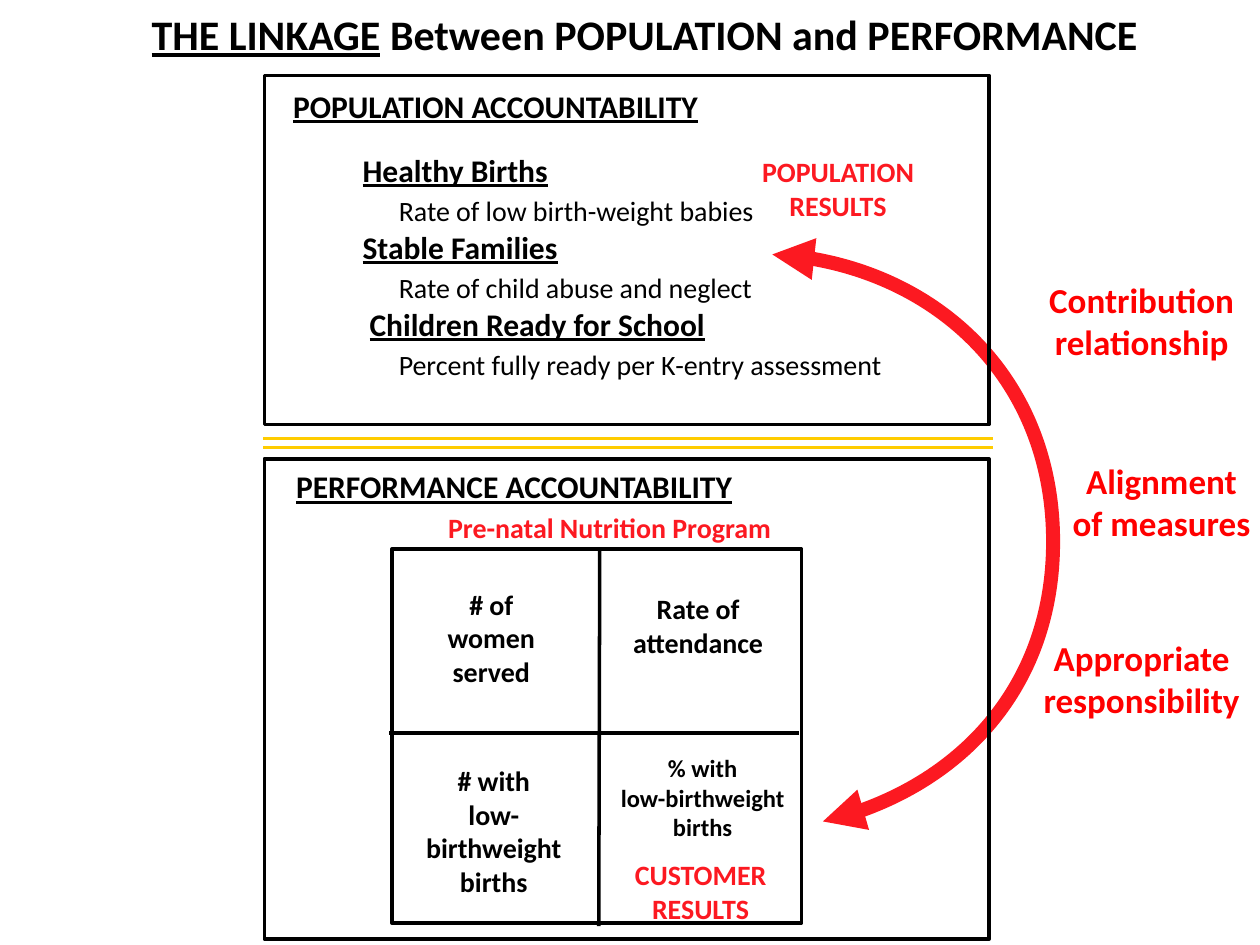
from lxml import etree
from pptx import Presentation
from pptx.dml.color import RGBColor
from pptx.enum.shapes import MSO_CONNECTOR, MSO_SHAPE
from pptx.enum.text import MSO_AUTO_SIZE, PP_ALIGN
from pptx.oxml.ns import qn
from pptx.util import Cm, Pt

LEFT, CENTER = PP_ALIGN.LEFT, PP_ALIGN.CENTER
RECTANGLE = MSO_SHAPE.RECTANGLE
STRAIGHT = MSO_CONNECTOR.STRAIGHT
GROW = MSO_AUTO_SIZE.SHAPE_TO_FIT_TEXT

FONT = "Calibri"
BLACK, RED, BRIGHT_RED, YELLOW = "000000", "FC1921", "FF0000", "FFCC00"


def color(hex_code):
    return RGBColor.from_string(hex_code)


def add_run(paragraph, text, size, ink=BLACK, bold=True, underline=False):
    run = paragraph.add_run()
    run.text = text
    font = run.font
    font.name, font.size = FONT, Pt(size)
    font.bold, font.underline = bold, underline
    font.color.rgb = color(ink)


def add_frame(slide, left, top, width, height):
    box = slide.shapes.add_textbox(Cm(left), Cm(top), Cm(width), Cm(height))
    frame = box.text_frame
    frame.word_wrap = True
    frame.auto_size = GROW
    return frame


def add_label(slide, lines, place, size, ink=BLACK, align=CENTER, underline=False):
    paragraph = add_frame(slide, *place).paragraphs[0]
    paragraph.alignment = align
    for number, line in enumerate(lines):
        if number:
            paragraph.add_line_break()
        add_run(paragraph, line, size, ink, underline=underline)


def add_outline(slide, left, top, width, height):
    outline = slide.shapes.add_shape(
        RECTANGLE, Cm(left), Cm(top), Cm(width), Cm(height))
    outline.shadow.inherit = False
    outline.fill.background()
    outline.line.color.rgb = color(BLACK)
    outline.line.width = Pt(2)


def add_rule(slide, x1, y1, x2, y2, ink=BLACK):
    rule = slide.shapes.add_connector(STRAIGHT, Cm(x1), Cm(y1), Cm(x2), Cm(y2))
    rule.line.color.rgb = color(ink)
    rule.line.width = Pt(2)
    etree.SubElement(rule._element.spPr, qn("a:effectLst"))


def add_curved_arrow(slide, start, curves):
    """Draw a double-headed arrow along Bezier curves of three points each."""
    points = [(Cm(x), Cm(y)) for curve in curves for x, y in curve]
    builder = slide.shapes.build_freeform(Cm(start[0]), Cm(start[1]))
    builder.add_line_segments(points, close=False)
    arrow = builder.convert_to_shape()
    arrow.shadow.inherit = False
    arrow.fill.background()
    arrow.line.color.rgb = color(RED)
    arrow.line.width = Pt(8)

    # Join every three straight segments into one Bezier curve
    outline = next(arrow._element.iter(qn("a:path")))
    segments = outline.findall(qn("a:lnTo"))
    for first in range(0, len(segments), 3):
        bezier = etree.SubElement(outline, qn("a:cubicBezTo"))
        for segment in segments[first:first + 3]:
            bezier.append(segment[0])
            outline.remove(segment)

    # Arrowheads at both ends
    line = arrow.line._get_or_add_ln()
    for end in ("a:headEnd", "a:tailEnd"):
        etree.SubElement(line, qn(end), type="triangle")


def add_results_list(slide, results, place):
    frame = add_frame(slide, *place)
    rows = []
    for result, measure, indent in results:
        rows.append((result, 18, True, indent))
        rows.append((measure, 16, False, 0.73))
    for number, (text, size, is_result, indent) in enumerate(rows):
        paragraph = frame.add_paragraph() if number else frame.paragraphs[0]
        paragraph._p.get_or_add_pPr().set("marL", str(Cm(indent)))
        paragraph.line_spacing = Pt(22)
        add_run(paragraph, text, size, bold=is_result, underline=is_result)


def add_title(slide):
    title = add_frame(slide, 2.29, 0.05, 21.41, 1.27).paragraphs[0]
    title.alignment = CENTER
    add_run(title, "THE LINKAGE", 24, underline=True)
    add_run(title, " Between POPULATION and PERFORMANCE", 24)


def add_population(slide):
    add_label(slide, ["POPULATION ACCOUNTABILITY"], (5.66, 1.63, 14.38, 1.09),
              18, align=LEFT, underline=True)
    add_results_list(slide, [
        ("Healthy Births", "Rate of low birth-weight babies", 0),
        ("Stable Families", "Rate of child abuse and neglect", 0),
        ("Children Ready for School",
         "Percent fully ready per K-entry assessment", 0.14),
    ], (7.06, 2.9, 13.77, 5.33))
    add_outline(slide, 5.33, 1.52, 14.61, 7.04)
    add_label(slide, ["POPULATION", "RESULTS"], (14.48, 3, 4.83, 1.63), 16, RED)


def add_performance(slide):
    add_label(slide, ["PERFORMANCE ACCOUNTABILITY"], (5.72, 9.3, 13.16, 1.09),
              18, align=LEFT, underline=True)
    add_label(slide, ["Pre-natal Nutrition Program"],
              (8.33, 10.16, 7.92, 0.94), 16, RED)

    # Four-quadrant grid
    add_rule(slide, 7.85, 14.78, 16.1, 14.78)
    add_outline(slide, 7.9, 11.07, 8.26, 7.54)
    add_rule(slide, 12.09, 11.07, 12.07, 18.67)
    add_outline(slide, 5.33, 9.25, 14.61, 9.68)

    # Measures in the quadrants
    for lines, place, size in [
        (["# of", "women served"], (7.95, 11.71, 3.91, 1.63), 16),
        (["Rate of", "attendance"], (12.12, 11.81, 3.91, 1.63), 16),
        (["# with", "low-birthweight", "births"], (7.9, 15.27, 4.11, 2.31), 16),
        (["% with", "low-birthweight", "births"], (12.12, 15.06, 4.09, 2.06), 14),
    ]:
        add_label(slide, lines, place, size)
    add_label(slide, ["CUSTOMER", "RESULTS"], (11.71, 17.17, 4.83, 1.63), 16, RED)


def main():
    deck = Presentation()
    deck.slide_width, deck.slide_height = Cm(25.4), Cm(19.05)
    slide = deck.slides.add_slide(deck.slide_layouts[6])

    # Linkage between the two kinds of results
    add_curved_arrow(slide, (16.59, 16.56), [
        [(19.3, 15.98), (21.23, 13.61), (21.23, 10.92)],
        [(21.23, 7.82), (18.75, 5.26), (15.57, 5.13)],
    ])
    for lines, left, top in [
        (["Contribution", "relationship"], 20.35, 5.49),
        (["Alignment", "of measures"], 20.75, 9.14),
        (["Appropriate", "responsibility"], 20.35, 12.7),
    ]:
        add_label(slide, lines, (left, top, 5.33, 1.96), 20, BRIGHT_RED)

    add_title(slide)
    add_population(slide)

    # Double divider
    for y in (8.84, 9.02):
        add_rule(slide, 5.31, y, 20.02, y, YELLOW)

    add_performance(slide)
    deck.save("out.pptx")


if __name__ == "__main__":
    main()
